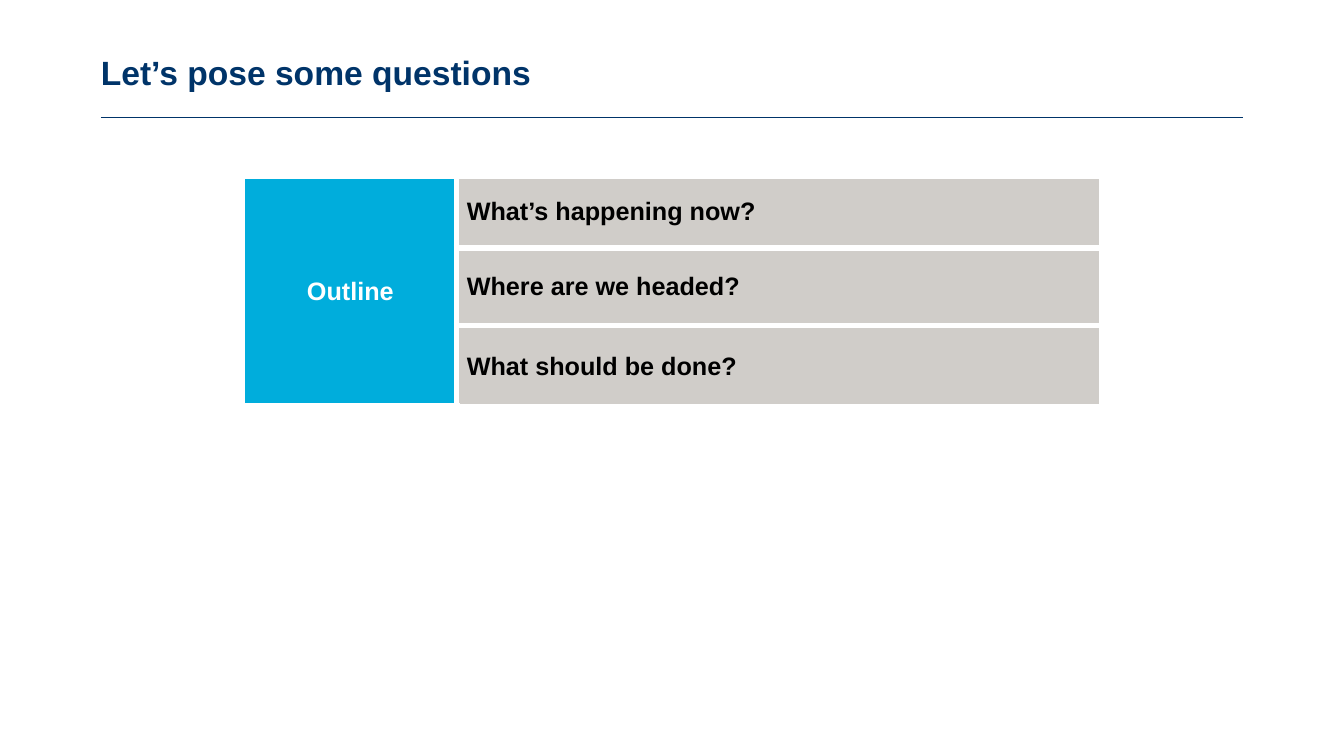
from pptx import Presentation
from pptx.dml.color import RGBColor
from pptx.enum.text import MSO_ANCHOR, PP_ALIGN
from pptx.oxml.ns import qn
from pptx.util import Inches, Pt
from lxml.etree import SubElement

# Content
TITLE = "Let’s pose some questions"
HEADING = "Outline"
QUESTIONS = ["What’s happening now?", "Where are we headed?", "What should be done?"]
COL_WIDTHS = [2.11, 6.38]
ROW_HEIGHTS = [0.72, 0.77, 0.81]

NAVY = RGBColor(0x00, 0x34, 0x69)
CYAN = RGBColor(0x00, 0xAD, 0xDC)
GREY = RGBColor(0xD0, 0xCD, 0xC9)
WHITE = RGBColor(0xFF, 0xFF, 0xFF)
BLACK = RGBColor(0, 0, 0)

# Border widths in points; sides must stay in schema order
HEADING_BORDERS = {"lnL": 1, "lnR": 4.5, "lnT": 6, "lnB": 6}


def style_text(p, size, color):
    font = p.runs[0].font
    font.name, font.size, font.bold = "Arial", Pt(size), True
    font.color.rgb = color


def fill_cell(cell, fill, borders):
    tc_pr = cell._tc.get_or_add_tcPr()
    for side, width in borders.items():
        ln = SubElement(tc_pr, qn(f"a:{side}"), w=str(Pt(width)))
        solid = SubElement(ln, qn("a:solidFill"))
        SubElement(solid, qn("a:srgbClr"), val=str(WHITE))
    cell.fill.solid()
    cell.fill.fore_color.rgb = fill
    cell.vertical_anchor = MSO_ANCHOR.MIDDLE


def write_cell(cell, text, color, align):
    p = cell.text_frame.paragraphs[0]
    p.text = text
    p.alignment = align
    style_text(p, 18, color)


prs = Presentation()
prs.slide_width, prs.slide_height = Inches(13.33), Inches(7.5)
slide = prs.slides.add_slide(prs.slide_layouts[5])

# Title
title = slide.shapes.title
title.left, title.top = Inches(1), Inches(0.34)
title.width, title.height = Inches(11.33), Inches(0.81)
tf = title.text_frame
tf.text = TITLE
tf.vertical_anchor = MSO_ANCHOR.MIDDLE
tf.margin_left = tf.margin_right = 0
p = tf.paragraphs[0]
p.alignment = PP_ALIGN.LEFT
p.line_spacing = 0.9
style_text(p, 24, NAVY)

# Rule under the title
rule = slide.shapes.add_connector(1, Inches(1), Inches(1.16), Inches(12.33), Inches(1.16))
rule.line.color.rgb = NAVY
rule.line.width = Pt(0.25)
SubElement(rule._element.spPr, qn("a:effectLst"))

# Outline table
table = slide.shapes.add_table(
    len(ROW_HEIGHTS), len(COL_WIDTHS), Inches(2.42), Inches(1.74),
    Inches(sum(COL_WIDTHS)), Inches(sum(ROW_HEIGHTS))).table
table.first_row = table.horz_banding = False
for column, width in zip(table.columns, COL_WIDTHS):
    column.width = Inches(width)
for row, height in zip(table.rows, ROW_HEIGHTS):
    row.height = Inches(height)

for i, question in enumerate(QUESTIONS):
    fill_cell(table.cell(i, 0), CYAN, HEADING_BORDERS)
    top = 6 if i == 0 else 4.5
    fill_cell(table.cell(i, 1), GREY, {"lnL": 4.5, "lnT": top, "lnB": 4.5})
    write_cell(table.cell(i, 1), question, BLACK, PP_ALIGN.LEFT)

table.cell(0, 0).merge(table.cell(len(QUESTIONS) - 1, 0))
write_cell(table.cell(0, 0), HEADING, WHITE, PP_ALIGN.CENTER)

prs.save("out.pptx")
